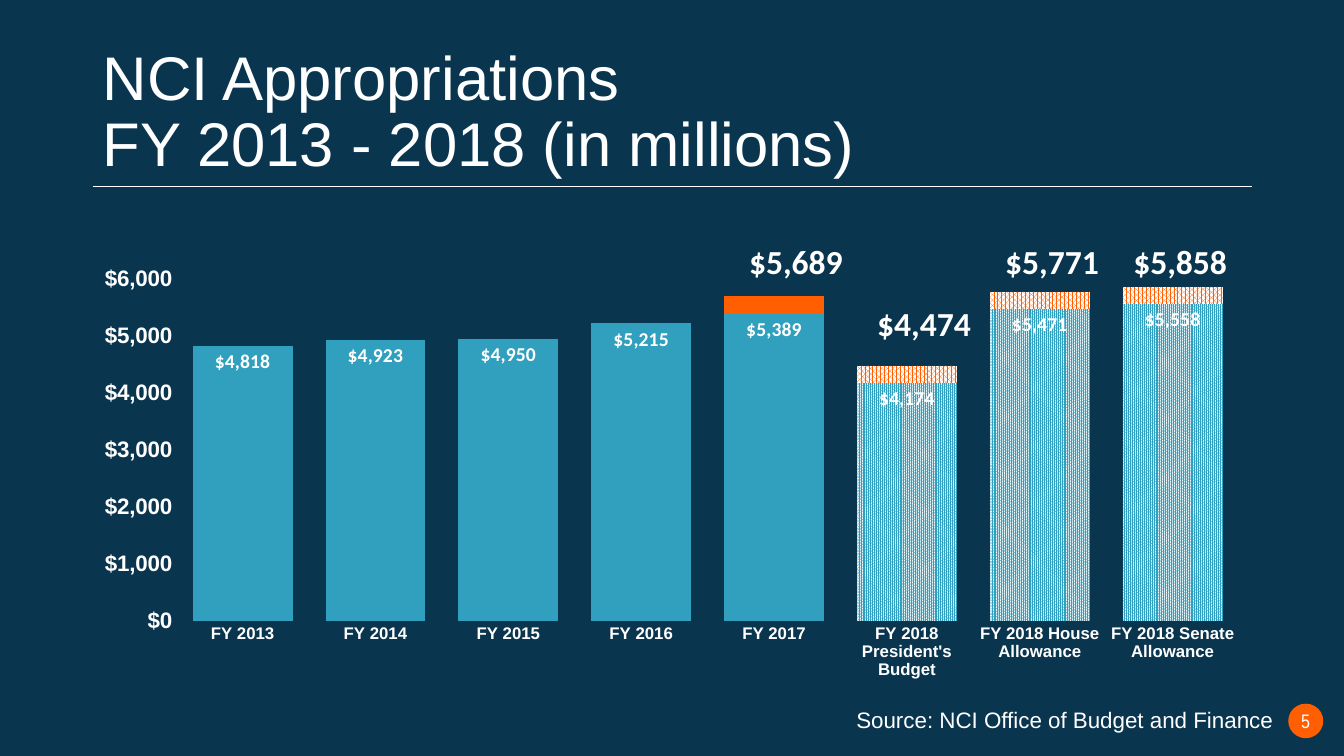
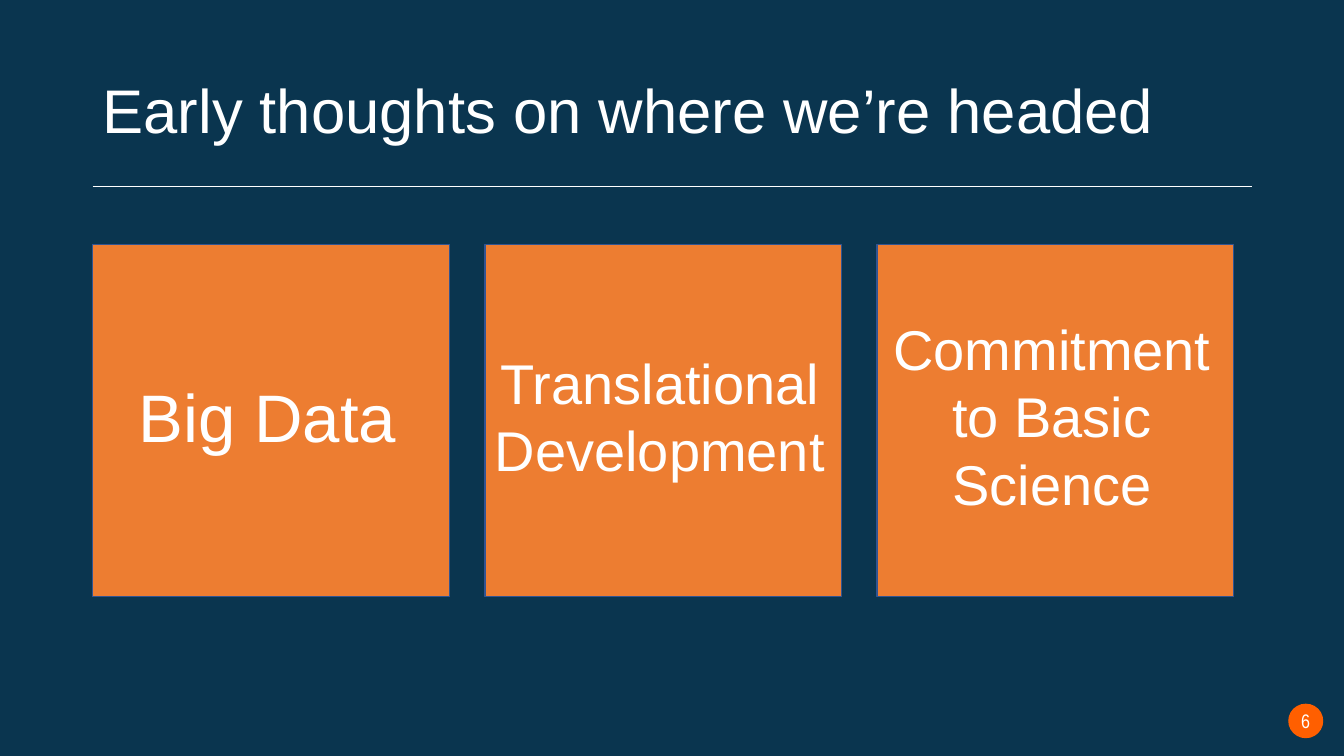
from dataclasses import dataclass

from lxml import etree
from pptx import Presentation
from pptx.chart.data import CategoryChartData
from pptx.dml.color import RGBColor
from pptx.enum.chart import XL_CHART_TYPE, XL_LABEL_POSITION, XL_TICK_MARK
from pptx.enum.dml import MSO_PATTERN
from pptx.enum.shapes import MSO_CONNECTOR, MSO_SHAPE
from pptx.enum.text import MSO_ANCHOR, PP_ALIGN
from pptx.oxml import parse_xml
from pptx.oxml.ns import nsdecls, qn
from pptx.util import Pt

LEFT, CENTER, RIGHT = PP_ALIGN.LEFT, PP_ALIGN.CENTER, PP_ALIGN.RIGHT
TOP, MIDDLE = MSO_ANCHOR.TOP, MSO_ANCHOR.MIDDLE
STACKED = XL_CHART_TYPE.COLUMN_STACKED
NO_TICK = XL_TICK_MARK.NONE

NAVY = "0A354F"
WHITE = "FFFFFF"
TEAL = "319FBE"
ORANGE = "FF5F00"
CARD_FILL = "ED7D31"
CARD_EDGE = "325491"

SANS = "Arial"
NARROW = "Arial Narrow"
LABEL_FONT = "Calibri"

MARGIN = 66.24
CONTENT_WIDTH = 828
RULE_Y = 133.2
DOLLARS = '"$"#,##0'


@dataclass(frozen=True)
class Box:
    left: float
    top: float
    width: float
    height: float

    def lengths(self) -> tuple[Pt, Pt, Pt, Pt]:
        return Pt(self.left), Pt(self.top), Pt(self.width), Pt(self.height)


@dataclass(frozen=True)
class TextStyle:
    size: float
    font: str = SANS
    bold: bool = False
    align: PP_ALIGN = LEFT
    anchor: MSO_ANCHOR = TOP
    spacing: float = 1.0
    wrap: bool = True


@dataclass(frozen=True)
class Year:
    label: str
    base: int
    supplement: int | None = None
    proposed: bool = False
    total_top: float = 168.5


@dataclass(frozen=True)
class Theme:
    text: str
    size: float


TITLE = TextStyle(44, anchor=MIDDLE, spacing=0.9)
PAGE_NUMBER = TextStyle(14, NARROW, align=CENTER, anchor=MIDDLE, wrap=False)
TOTAL = TextStyle(24, LABEL_FONT, bold=True, align=CENTER)
SOURCE = TextStyle(16, align=RIGHT)
VALUE_LABEL = TextStyle(14, LABEL_FONT, bold=True)
CATEGORY_AXIS = TextStyle(12, bold=True)
VALUE_AXIS = TextStyle(16, bold=True)

YEARS = [
    Year("FY 2013", 4818),
    Year("FY 2014", 4923),
    Year("FY 2015", 4950),
    Year("FY 2016", 5215),
    Year("FY 2017", 5389, 300),
    Year("FY 2018 President's Budget", 4174, 300, True, 213.1),
    Year("FY 2018 House Allowance", 5471, 300, True),
    Year("FY 2018 Senate Allowance", 5558, 300, True),
]

THEMES = [
    Theme("Big Data", 48),
    Theme("Translational Development", 40),
    Theme("Commitment to Basic Science", 40),
]


def color(value: str) -> RGBColor:
    return RGBColor.from_string(value)


def style_font(font, style: TextStyle) -> None:
    font.name = style.font
    font.size = Pt(style.size)
    font.bold = style.bold
    font.color.rgb = color(WHITE)


def write(frame, text: str, style: TextStyle) -> None:
    frame.text = text
    frame.word_wrap = style.wrap
    frame.vertical_anchor = style.anchor
    for paragraph in frame.paragraphs:
        paragraph.alignment = style.align
        paragraph.line_spacing = style.spacing
        for run in paragraph.runs:
            style_font(run.font, style)


def add_text(slide, box: Box, text: str, style: TextStyle) -> None:
    write(slide.shapes.add_textbox(*box.lengths()).text_frame, text, style)


def add_filled(slide, preset: MSO_SHAPE, box: Box, fill: str, edge: str | None = None):
    shape = slide.shapes.add_shape(preset, *box.lengths())
    shape.shadow.inherit = False
    shape.fill.solid()
    shape.fill.fore_color.rgb = color(fill)
    if edge:
        shape.line.color.rgb = color(edge)
        shape.line.width = Pt(1)
    else:
        shape.line.fill.background()
    return shape


def add_slide(prs, title: str, number: int):
    slide = prs.slides.add_slide(prs.slide_layouts[6])
    slide.background.fill.solid()
    slide.background.fill.fore_color.rgb = color(NAVY)

    badge = add_filled(slide, MSO_SHAPE.OVAL, Box(920.2, 502.6, 25, 24.7), ORANGE)
    write(badge.text_frame, str(number), PAGE_NUMBER)

    rule = slide.shapes.add_connector(
        MSO_CONNECTOR.STRAIGHT, Pt(MARGIN), Pt(RULE_Y), Pt(MARGIN + CONTENT_WIDTH), Pt(RULE_Y)
    )
    rule.line.color.rgb = color(WHITE)
    rule.line.width = Pt(0.5)
    etree.SubElement(rule._element.spPr, qn("a:effectLst"))

    add_text(slide, Box(MARGIN, 28.8, CONTENT_WIDTH, 104.4), title, TITLE)
    return slide


def style_axis(axis, style: TextStyle) -> None:
    axis.has_major_gridlines = False
    axis.major_tick_mark = NO_TICK
    axis.minor_tick_mark = NO_TICK
    axis.format.line.fill.background()
    style_font(axis.tick_labels.font, style)


def style_series(series, fill: str, pattern: MSO_PATTERN) -> None:
    series.format.fill.solid()
    series.format.fill.fore_color.rgb = color(fill)
    series.invert_if_negative = False
    for index, year in enumerate(YEARS):
        if year.proposed:
            hatch = series.points[index].format.fill
            hatch.patterned()
            hatch.pattern = pattern
            hatch.fore_color.rgb = color(fill)
            hatch.back_color.rgb = color(WHITE)


def set_plot_area(chart, x: float, y: float, w: float, h: float) -> None:
    plot_area = chart._chartSpace.chart.plotArea
    for old in plot_area.findall(qn("c:layout")):
        plot_area.remove(old)
    sizes = "".join(f'<c:{tag} val="{val}"/>' for tag, val in zip("xywh", (x, y, w, h)))
    plot_area.insert(0, parse_xml(
        f'<c:layout {nsdecls("c")}><c:manualLayout><c:layoutTarget val="inner"/>'
        f'<c:xMode val="edge"/><c:yMode val="edge"/>{sizes}</c:manualLayout></c:layout>'
    ))


def add_budget_chart(slide) -> None:
    data = CategoryChartData(number_format=DOLLARS)
    data.categories = [year.label for year in YEARS]
    data.add_series("Series 1", [year.base for year in YEARS])
    data.add_series("Series 2", [year.supplement for year in YEARS])
    chart_box = Box(MARGIN, 144, CONTENT_WIDTH, 342.7)
    chart = slide.shapes.add_chart(STACKED, *chart_box.lengths(), data).chart
    chart.has_title = False
    chart.has_legend = False
    chart.font.name = LABEL_FONT
    chart.font.size = Pt(10)
    set_plot_area(chart, 0.072, 0.161, 0.917, 0.713)

    style_axis(chart.category_axis, CATEGORY_AXIS)
    style_axis(chart.value_axis, VALUE_AXIS)
    chart.value_axis.minimum_scale = 0
    chart.value_axis.maximum_scale = 6000
    chart.value_axis.major_unit = 1000
    chart.value_axis.tick_labels.number_format = DOLLARS
    chart.value_axis.tick_labels.number_format_is_linked = False

    plot = chart.plots[0]
    plot.vary_by_categories = False
    plot.gap_width = 33
    plot.overlap = 100
    base, supplement = plot.series
    style_series(base, TEAL, MSO_PATTERN.PERCENT_90)
    style_series(supplement, ORANGE, MSO_PATTERN.PERCENT_75)

    labels = base.data_labels
    labels.show_value = True
    labels.position = XL_LABEL_POSITION.INSIDE_END
    labels.number_format = DOLLARS
    labels.number_format_is_linked = False
    style_font(labels.font, VALUE_LABEL)


def build_appropriations(prs) -> None:
    slide = add_slide(prs, "NCI Appropriations\vFY 2013 - 2018 (in millions)", 5)
    add_budget_chart(slide)
    supplemented = [year for year in YEARS if year.supplement]
    for index, year in enumerate(supplemented):
        box = Box(523.2 + index * 91.5, year.total_top, 90.7, 36)
        add_text(slide, box, f"${year.base + year.supplement:,}", TOTAL)
    add_text(slide, Box(328.3, 501.1, 588.2, 26.6), "Source: NCI Office of Budget and Finance", SOURCE)


def build_directions(prs) -> None:
    slide = add_slide(prs, "Early thoughts on where we’re headed", 6)
    for index, theme in enumerate(THEMES):
        box = Box(MARGIN + index * 280.1, 174.8, 254.9, 251.4)
        card = add_filled(slide, MSO_SHAPE.RECTANGLE, box, CARD_FILL, CARD_EDGE)
        frame = card.text_frame
        write(frame, theme.text, TextStyle(theme.size, align=CENTER, anchor=MIDDLE))
        frame.margin_left, frame.margin_right = Pt(2), Pt(7)
        frame.margin_top, frame.margin_bottom = Pt(3.6), Pt(11)


def main() -> None:
    prs = Presentation()
    prs.slide_width, prs.slide_height = Pt(960), Pt(540)
    build_appropriations(prs)
    build_directions(prs)
    prs.save("out.pptx")


if __name__ == "__main__":
    main()
